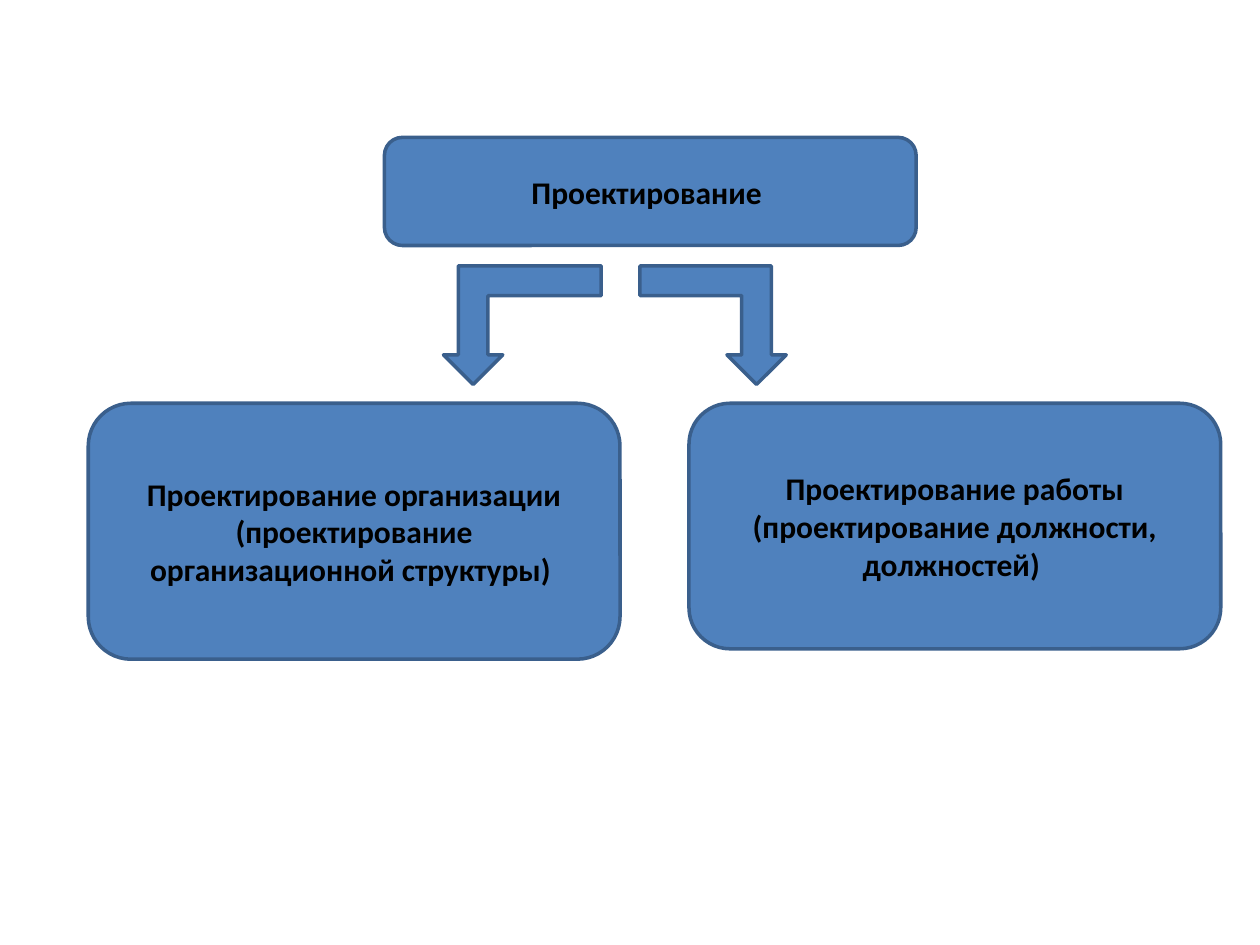
from pptx import Presentation
from pptx.dml.color import RGBColor
from pptx.enum.shapes import MSO_SHAPE
from pptx.enum.text import MSO_ANCHOR, PP_ALIGN
from pptx.util import Cm, Pt

ROUNDED = MSO_SHAPE.ROUNDED_RECTANGLE
BENT_ARROW = MSO_SHAPE.BENT_UP_ARROW
MIDDLE = MSO_ANCHOR.MIDDLE
CENTER = PP_ALIGN.CENTER

BLUE = RGBColor(0x4F, 0x81, 0xBD)
DARK_BLUE = RGBColor(0x3A, 0x5F, 0x8C)
BLACK = RGBColor(0, 0, 0)

BOX_W = 10.72


def add_blue_shape(s, kind, x, y, w, h):
    sp = s.shapes.add_shape(kind, Cm(x), Cm(y), Cm(w), Cm(h))
    sp.shadow.inherit = False
    sp.fill.solid()
    sp.fill.fore_color.rgb = BLUE
    sp.line.color.rgb = DARK_BLUE
    sp.line.width = Pt(2)
    return sp


def add_box(s, x, y, h, lines):
    sp = add_blue_shape(s, ROUNDED, x, y, BOX_W, h)
    tf = sp.text_frame
    tf.word_wrap = True
    tf.vertical_anchor = MIDDLE
    tf.text = "\n".join(lines)
    for p in tf.paragraphs:
        p.alignment = CENTER
        p.font.name = "Calibri"
        p.font.size = Pt(18)
        p.font.bold = True
        p.font.color.rgb = BLACK


def add_down_arrow(s, x, y, w, h, to_right=False):
    sp = add_blue_shape(s, BENT_ARROW, x, y, w, h)
    sp.rotation = 180
    if to_right:
        sp.element.spPr.xfrm.set("flipH", "1")


def add_design_tree(s, x, y):
    add_box(s, x + 5.97, y, 2.18, ["Проектирование "])
    branch_y = y + 5.36
    add_box(s, x + 12.11, branch_y, 4.95,
            ["Проектирование работы",
             "(проектирование должности, должностей) "])
    add_box(s, x, branch_y, 5.16,
            ["Проектирование организации",
             "(проектирование организационной структуры) "])
    arrow_y = y + 2.59
    add_down_arrow(s, x + 7.16, arrow_y, 3.18, 2.39)
    add_down_arrow(s, x + 11.12, arrow_y, 2.95, 2.39, to_right=True)


def main():
    prs = Presentation()
    prs.slide_width, prs.slide_height = Cm(25.4), Cm(19.05)
    s = prs.slides.add_slide(prs.slide_layouts[6])
    add_design_tree(s, 1.78, 2.77)
    prs.save("out.pptx")


if __name__ == "__main__":
    main()
